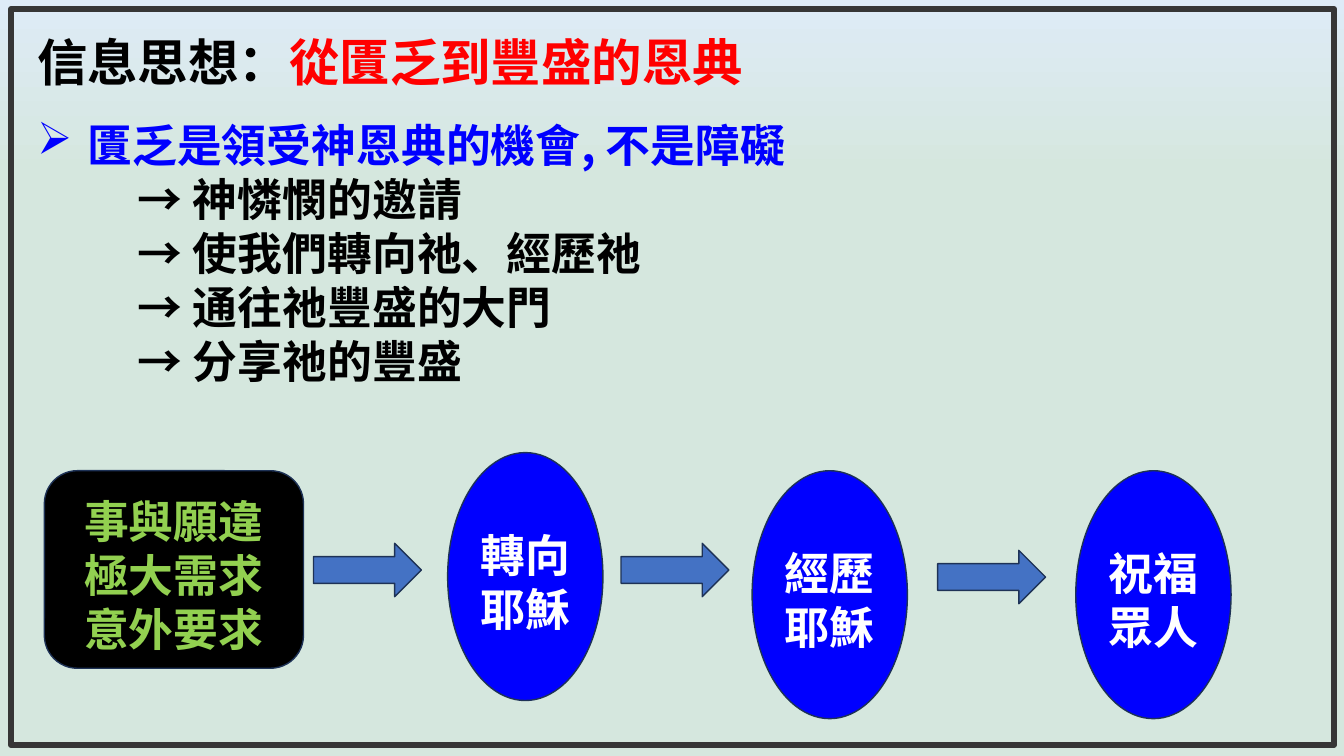
from lxml import etree
from pptx import Presentation
from pptx.dml.color import RGBColor
from pptx.enum.shapes import MSO_SHAPE
from pptx.enum.text import MSO_ANCHOR, PP_ALIGN
from pptx.oxml.ns import qn
from pptx.util import Inches, Pt

RECTANGLE = MSO_SHAPE.RECTANGLE
ROUNDED = MSO_SHAPE.ROUNDED_RECTANGLE
ARROW = MSO_SHAPE.RIGHT_ARROW
OVAL = MSO_SHAPE.FLOWCHART_CONNECTOR
MIDDLE = MSO_ANCHOR.MIDDLE
CENTER = PP_ALIGN.CENTER

FONT = "Noto Sans CJK SC"
LINE_HEIGHT = 1.206
COLORS = {
    "sky": "DEEBF7", "mint": "D5E7DE", "frame": "363636", "edge": "1E3256",
    "black": "000000", "red": "FF0000", "blue": "0000FF", "white": "FFFFFF",
    "green": "92D050", "arrow": "4472C4",
}


def write_line(para, spans, size):
    """Fill a paragraph with (text, colour) spans in bold."""
    para.line_spacing = Pt(round(size * LINE_HEIGHT, 1))
    for text, color in spans:
        span = para.add_run()
        span.text = text
        for name, value in {"size": Pt(size), "bold": True, "name": FONT}.items():
            setattr(span.font, name, value)
        span.font.color.rgb = RGBColor.from_string(COLORS[color])
        east_asian = etree.SubElement(span.font._element, qn("a:ea"))
        east_asian.set("typeface", FONT)


def draw_shape(kind, place, fill, line, width):
    shape = page.shapes.add_shape(kind, *[Inches(value) for value in place])
    shape.shadow.inherit = False
    if fill:
        shape.fill.solid()
        shape.fill.fore_color.rgb = RGBColor.from_string(COLORS[fill])
    else:
        shape.fill.background()
    shape.line.color.rgb = RGBColor.from_string(COLORS[line])
    shape.line.width = Pt(width)
    return shape


deck = Presentation()
deck.slide_width, deck.slide_height = Inches(13.33), Inches(7.5)
page = deck.slides.add_slide(deck.slide_layouts[6])

# Background gradient and frame
background = page.background.fill
background.gradient()
background.gradient_angle = 270
for stop, (color, position) in zip(background.gradient_stops, [("sky", 0), ("mint", 0.23)]):
    stop.color.rgb = RGBColor.from_string(COLORS[color])
    stop.position = position
draw_shape(RECTANGLE, (0.11, 0.09, 13.12, 7.3), None, "frame", 4.5)

# Title, main point and its consequences
box = page.shapes.add_textbox(Inches(0.27), Inches(0.26), Inches(12.96), Inches(4))
box.text_frame.word_wrap = True
write_line(box.text_frame.paragraphs[0],
           [("信息思想：", "black"), ("從匱乏到豐盛的恩典", "red")], 36)

point = box.text_frame.add_paragraph()
properties = point._p.get_or_add_pPr()
properties.set("marL", str(Inches(0.5)))
properties.set("indent", str(-Inches(0.5)))
etree.SubElement(properties, qn("a:buChar")).set("char", "➢")
point.space_before = Pt(18)
write_line(point, [("匱乏是領受神恩典的機會, 不是障礙", "blue")], 32)

for text in ["神憐憫的邀請", "使我們轉向祂、經歷祂", "通往祂豐盛的大門", "分享祂的豐盛"]:
    para = box.text_frame.add_paragraph()
    para._p.get_or_add_pPr().set("marL", str(Inches(1)))
    write_line(para, [("→ " + text, "black")], 32)

# Flow from need to blessing
steps = [
    (ROUNDED, (0.44, 4.67, 2.57, 1.96), "black", "green", ["事與願違", "極大需求", "意外要求"]),
    (OVAL, (4.44, 4.49, 1.54, 2.46), "blue", "white", ["轉向耶穌"]),
    (OVAL, (7.46, 4.67, 1.54, 2.46), "blue", "white", ["經歷", "耶穌"]),
    (OVAL, (10.67, 4.67, 1.54, 2.46), "blue", "white", ["祝福眾人"]),
]
frame_format = {
    "word_wrap": True, "vertical_anchor": MIDDLE,
    "margin_left": Inches(0.05), "margin_right": Inches(0.05),
    "margin_top": Inches(0.15), "margin_bottom": Inches(0.05),
}
for kind, place, fill, color, lines in steps:
    frame = draw_shape(kind, place, fill, "edge", 1).text_frame
    for name, value in frame_format.items():
        setattr(frame, name, value)
    for index, text in enumerate(lines):
        para = frame.add_paragraph() if index else frame.paragraphs[0]
        para.alignment = CENTER
        write_line(para, [(text, color)], 32)

# Arrows between the steps
for left, top in [(3.11, 5.39), (6.16, 5.39), (9.3, 5.46)]:
    draw_shape(ARROW, (left, top, 1.07, 0.53), "arrow", "edge", 1)

deck.save("out.pptx")
